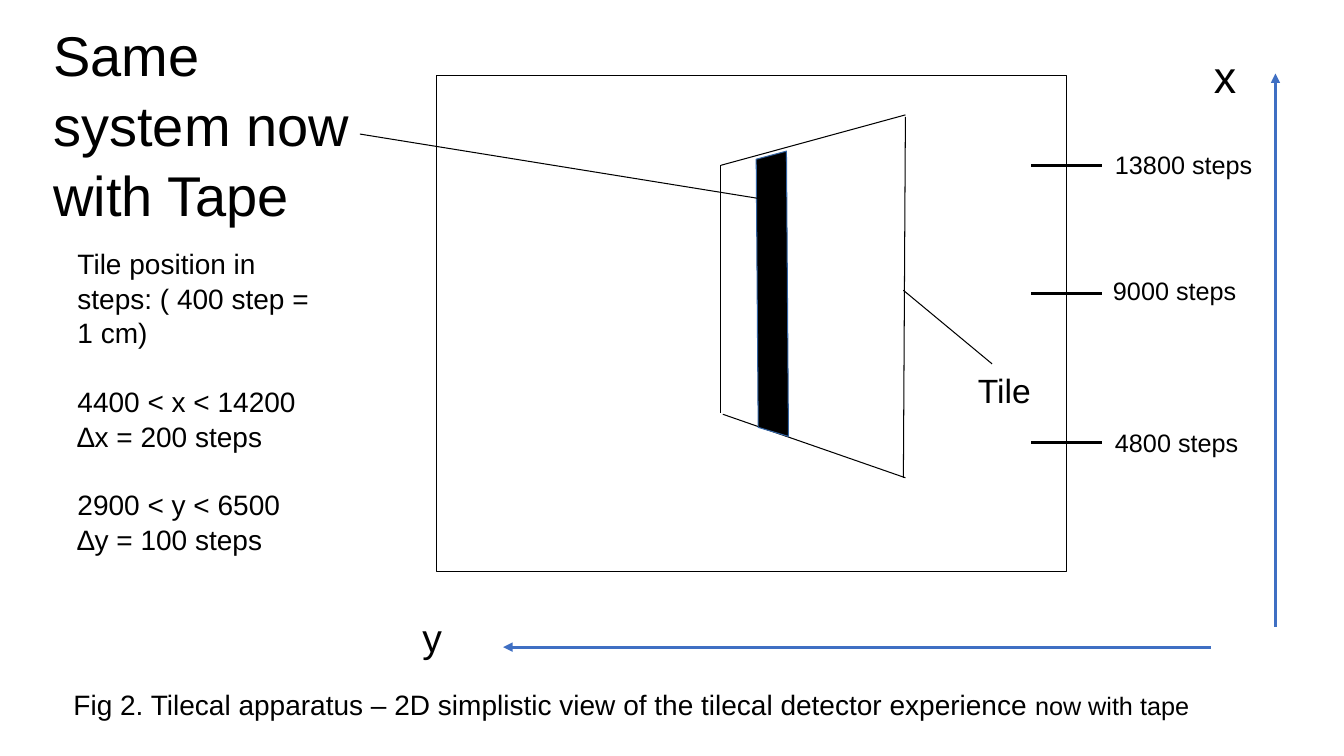
from lxml.etree import SubElement as Sub
from pptx import Presentation
from pptx.dml.color import RGBColor
from pptx.enum.shapes import MSO_CONNECTOR as Conn, MSO_SHAPE as Form
from pptx.enum.text import MSO_ANCHOR as Anchor, PP_ALIGN as Align
from pptx.oxml.ns import qn
from pptx.util import Inches, Pt

BLACK, BLUE, EDGE = "000000", "3F6FC3", "3465A4"


def color(code):
    return RGBColor.from_string(code)


def stroke(line, code, width):
    line.color.rgb = color(code)
    line.width = Pt(width)


def style(run, size):
    run.font.name = "Arial"
    run.font.size = Pt(size)
    run.font.color.rgb = color(BLACK)


def write(shape, text, size=20, space=1.0, gaps=(), extra="", small=18):
    """Fill a shape with one paragraph a line; gaps lists those set apart."""
    frame = shape.text_frame
    frame.word_wrap = True
    frame.vertical_anchor = Anchor.TOP
    frame.margin_left = frame.margin_right = Inches(0.1)
    frame.margin_top = frame.margin_bottom = Inches(0.05)
    for i, words in enumerate(text.split("\n")):
        para = frame.add_paragraph() if i else frame.paragraphs[0]
        para.alignment = Align.LEFT
        para.line_spacing = space
        para.space_before = Pt(size * 1.2 if i in gaps else 0)
        run = para.add_run()
        run.text = words
        style(run, size)
    if extra:
        run = para.add_run()
        run.text = extra
        style(run, small)


def label(slide, box, text, **form):
    write(slide.shapes.add_textbox(*map(Inches, box)), text, **form)


def link(slide, start, end, code=BLACK, width=0.75, arrow=False):
    ends = map(Inches, (*start, *end))
    line = slide.shapes.add_connector(Conn.STRAIGHT, *ends)
    stroke(line.line, code, width)
    if arrow:
        Sub(line.line._get_or_add_ln(), qn("a:tailEnd"), type="triangle")
    Sub(line._element.spPr, qn("a:effectLst"))


def add_notes(slide, left, top):
    # Title and scan ranges down the left side
    title = slide.shapes.title
    title.left, title.top = Inches(left), Inches(top)
    title.width, title.height = Inches(3.31), Inches(2.12)
    write(title, "Same system now with Tape", size=40, space=1.04)
    ranges = ("Tile position in steps: ( 400 step = 1 cm)\n"
              "4400 < x < 14200\n∆x = 200 steps\n"
              "2900 < y < 6500\n∆y = 100 steps")
    label(slide, (left + 0.24, top + 2.25, 2.6, 3.43), ranges,
          space=1.04, gaps=(1, 3))


def add_view(slide, left, top, width, height):
    # Outer frame of the detector
    frame = slide.shapes.add_shape(
        Form.RECTANGLE, *map(Inches, (left, top, width, height)))
    frame.shadow.inherit = False
    frame.fill.background()
    stroke(frame.line, BLACK, 0.75)

    def at(x, y):
        return left + x, top + y

    # Tile edges: left, top, right, bottom
    for start, end in (((2.82, 0.89), (2.82, 3.35)),
                       ((2.82, 0.89), (4.65, 0.39)),
                       ((4.65, 0.41), (4.63, 3.99)),
                       ((2.84, 3.36), (4.65, 3.99))):
        link(slide, at(*start), at(*end))

    # Strip of tape on the tile
    points = [tuple(map(Inches, at(*p))) for p in (
        (3.47, 0.75), (3.49, 3.58), (3.19, 3.49), (3.17, 0.83))]
    build = slide.shapes.build_freeform(*points[0], scale=1.0)
    build.add_line_segments(points[1:], close=True)
    tape = build.convert_to_shape()
    tape.shadow.inherit = False
    tape.fill.solid()
    tape.fill.fore_color.rgb = color(BLACK)
    stroke(tape.line, EDGE, 0.75)

    # Pointers to the tape and the tile
    link(slide, at(3.2, 1.22), at(-0.76, 0.58))
    link(slide, at(4.63, 2.13), at(5.51, 2.86))
    label(slide, (*at(5.27, 2.87), 0.88, 0.5), "Tile", size=24)

    # Step marks across the right edge
    for steps, y, dx, dy in ((13800, 0.89, 0.38, -0.21),
                             (9000, 2.16, 0.36, -0.23),
                             (4800, 3.64, 0.38, -0.2)):
        link(slide, at(width - 0.35, y), at(width + 0.35, y), width=2.25)
        label(slide, (*at(width + dx, y + dy), 1.88, 0.4),
              f"{steps} steps", size=18)


def add_axes(slide, right, foot):
    # Horizontal y axis and vertical x axis
    link(slide, (right - 0.64, foot), (right - 7.66, foot), BLUE, 2.25, True)
    label(slide, (right - 8.56, foot - 0.38, 0.49, 0.57), "y", size=28)
    link(slide, (right, foot - 0.2), (right, foot - 5.69), BLUE, 2.25, True)
    label(slide, (right - 0.71, foot - 5.99, 0.97, 0.64), "x", size=32)


def main():
    deck = Presentation()
    deck.slide_width, deck.slide_height = Inches(13.33), Inches(7.5)
    slide = deck.slides.add_slide(deck.slide_layouts[5])
    add_view(slide, 4.33, 0.75, 6.25, 4.92)
    add_axes(slide, 12.65, 6.42)
    add_notes(slide, 0.43, 0.13)
    # Caption
    label(slide, (0.63, 6.77, 11.65, 0.69),
          "Fig 2. Tilecal apparatus – 2D simplistic view of the "
          "tilecal detector experience", extra=" now with tape")
    deck.save("out.pptx")


if __name__ == "__main__":
    main()
